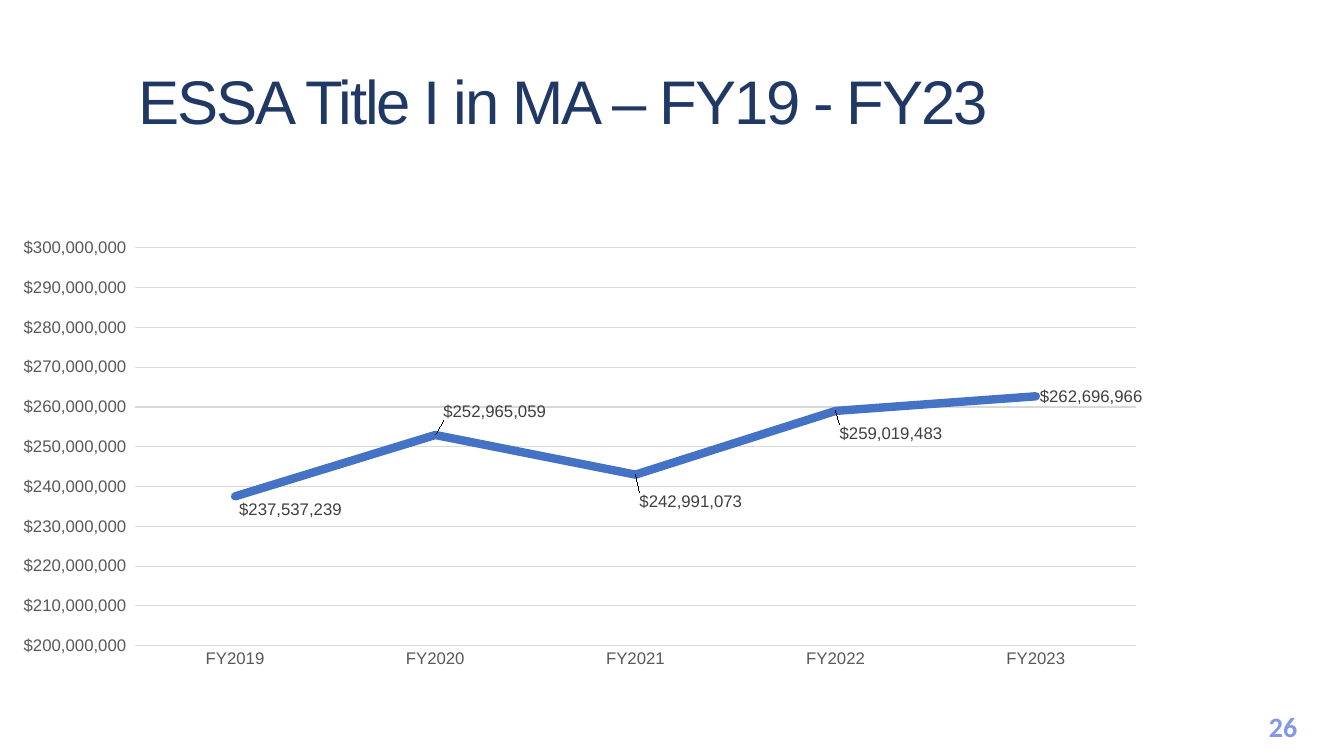
from dataclasses import dataclass

from lxml import etree
from pptx import Presentation
from pptx import util as u
from pptx.chart import data as cd
from pptx.dml import color as col
from pptx.enum import chart as ec, text as et
from pptx.oxml import ns


@dataclass(frozen=True)
class Theme:
    navy: str = "203864"
    blue: str = "4472C4"
    page: str = "8397E7"
    axis: str = "595959"
    label: str = "404040"
    grid: str = "D9D9D9"
    face: str = "Arial"
    face_page: str = "Calibri"
    big: int = 44
    mid: int = 20
    small: int = 12


theme = Theme()
MONEY = '"$"#,##0_);[Red]\\("$"#,##0\\)'


def style(font, tint, **values):
    for key, value in values.items():
        setattr(font, key, value)
    font.color.rgb = col.RGBColor.from_string(tint)


def place(parent, index, **values):
    """Insert a manual chart layout at the given child position."""
    for old in parent.findall(ns.qn("c:layout")):
        parent.remove(old)
    layout = etree.Element(ns.qn("c:layout"))
    manual = etree.SubElement(layout, ns.qn("c:manualLayout"))
    for key, value in values.items():
        etree.SubElement(manual, ns.qn("c:" + key), val=str(value))
    parent.insert(index, layout)


deck = Presentation()
deck.slide_width, deck.slide_height = u.Pt(960), u.Pt(540)
slide = deck.slides.add_slide(deck.slide_layouts[6])

# Title and page number
texts = [
    ("ESSA Title I in MA – FY19 - FY23", (92, 33, 828, 83), et.PP_ALIGN.LEFT, theme.navy,
     dict(name=theme.face, size=u.Pt(theme.big))),
    ("26", (894, 502.5, 45, 32), et.PP_ALIGN.CENTER, theme.page,
     dict(name=theme.face_page, size=u.Pt(theme.mid), bold=True)),
]
for words, spot, align, tint, look in texts:
    box = slide.shapes.add_textbox(*map(u.Pt, spot))
    frame = box.text_frame
    frame.word_wrap = True
    frame.vertical_anchor = et.MSO_ANCHOR.MIDDLE
    para = frame.paragraphs[0]
    para.alignment = align
    run = para.add_run()
    run.text = words
    style(run.font, tint, **look)
    if tint == theme.navy:
        para.line_spacing = 0.9
        run.font._element.set("spc", "-150")

# Funding by year
funds = {
    "FY2019": 237537239,
    "FY2020": 252965059,
    "FY2021": 242991073,
    "FY2022": 259019483,
    "FY2023": 262696966,
}
data = cd.CategoryChartData(number_format=MONEY)
data.categories = list(funds)
data.add_series("Series 1", list(funds.values()))
chart = slide.shapes.add_chart(
    ec.XL_CHART_TYPE.LINE, *map(u.Pt, (0, 164, 828, 319)), data).chart
chart.has_legend = chart.has_title = False
small = dict(name=theme.face, size=u.Pt(theme.small))
style(chart.font, theme.axis, **small)
area = chart._chartSpace.find(".//" + ns.qn("c:plotArea"))
place(area, 0, layoutTarget="inner", xMode="edge", yMode="edge",
      x=0.1165, y=0.041, w=0.8635, h=0.891)

for axis in (chart.category_axis, chart.value_axis):
    axis.major_tick_mark = axis.minor_tick_mark = ec.XL_TICK_MARK.NONE
    style(axis.tick_labels.font, theme.axis, **small)
years, money = chart.category_axis, chart.value_axis
money.minimum_scale, money.maximum_scale = 200_000_000, 300_000_000
money.major_unit = 10_000_000
money.has_major_gridlines = True
money.format.line.fill.background()
money.tick_labels.number_format = MONEY
money.tick_labels.number_format_is_linked = False

series = chart.plots[0].series[0]
series.smooth = False
series.marker.style = ec.XL_MARKER_STYLE.NONE
lines = [
    (years.format.line, theme.grid, 0.75),
    (money.major_gridlines.format.line, theme.grid, 0.75),
    (series.format.line, theme.blue, 6),
]
for line, tint, width in lines:
    line.width = u.Pt(width)
    line.color.rgb = col.RGBColor.from_string(tint)
series.format.line._get_or_add_ln().set("cap", "rnd")

# Value labels, each moved off its point by a share of the chart size
labels = series.data_labels
labels.show_value = True
labels.number_format = MONEY
labels.number_format_is_linked = False
labels.position = ec.XL_LABEL_POSITION.RIGHT
style(labels.font, theme.label, **small)
shifts = [(0, 0.029), (0.0035, -0.0515), (0, 0.06), (0, 0.0515)]
for spot, (dx, dy) in enumerate(shifts):
    label = series.points[spot].data_label
    label.position = ec.XL_LABEL_POSITION.RIGHT
    style(label.font, theme.label, **small)
    place(label._dLbl, 1, x=dx, y=dy)

deck.save("out.pptx")
